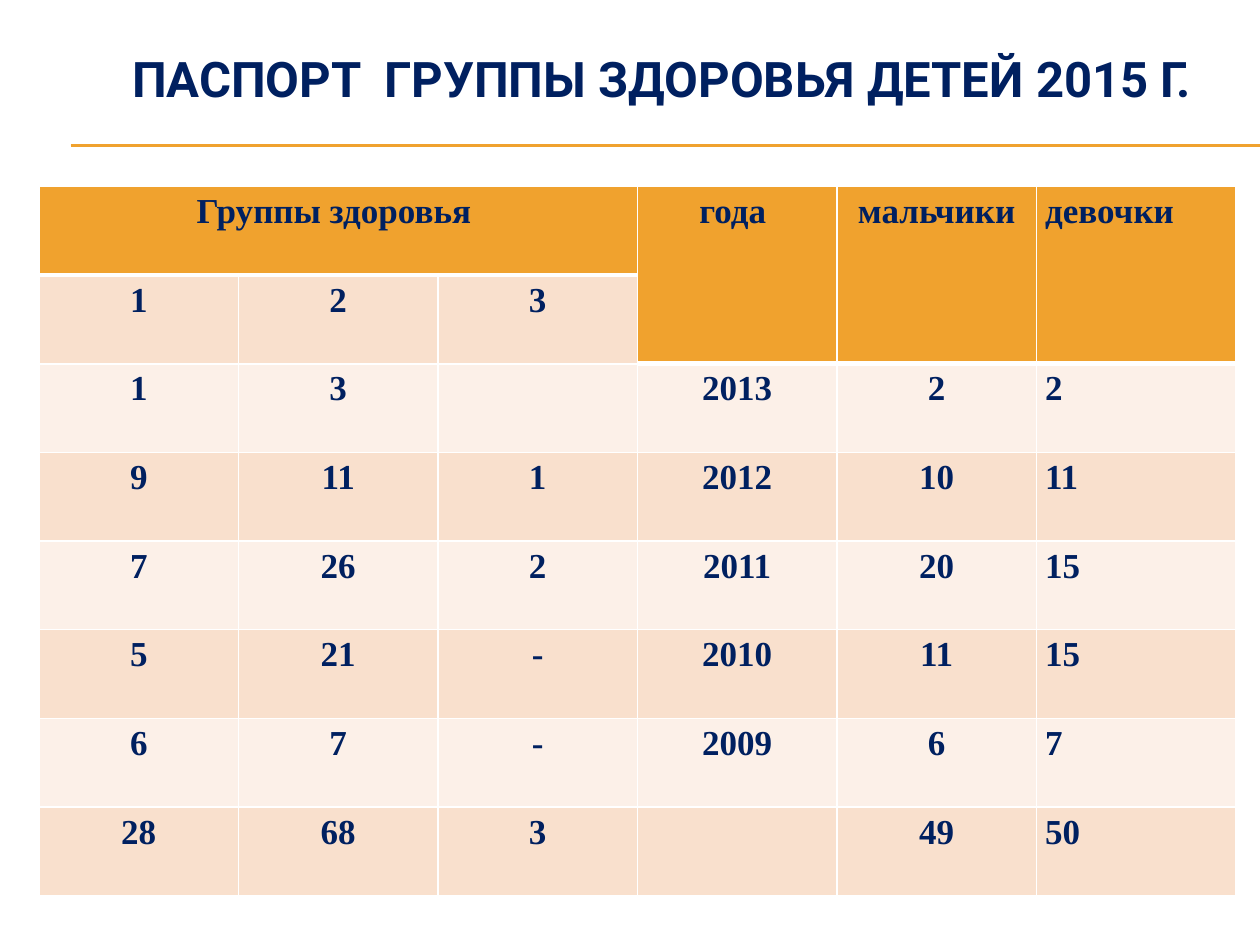
import pptx
import pptx.util
import pptx.dml.color
import pptx.enum.shapes
import pptx.enum.text
import pptx.oxml
import pptx.oxml.ns
import lxml.etree

Inches = pptx.util.Inches
Pt = pptx.util.Pt
RGBColor = pptx.dml.color.RGBColor
ALIGN = pptx.enum.text.PP_ALIGN
qn = pptx.oxml.ns.qn

NAVY = RGBColor(0x00, 0x20, 0x60)
ORANGE = RGBColor(0xF0, 0xA2, 0x2E)
PEACH = RGBColor(0xF9, 0xE0, 0xCD)
CREAM = RGBColor(0xFC, 0xF0, 0xE8)
WHITE = RGBColor(0xFF, 0xFF, 0xFF)

TITLE = "ПАСПОРТ  ГРУППЫ ЗДОРОВЬЯ ДЕТЕЙ 2015 Г."
ROWS = [
    ["Группы здоровья ", "", "", "года ", "мальчики", "девочки"],
    ["1", "2", "3", "", "", ""],
    ["1", "3", "", "2013", "2", "2"],
    ["9", "11", "1", "2012", "10", "11"],
    ["7", "26", "2", "2011", "20", "15"],
    ["5", "21", "-", "2010", "11", "15"],
    ["6", "7", "-", "2009", "6", "7"],
    ["28", "68", "3", "", "49", "50"],
]
GROUP_COLS = 3


def format_runs(p, font, size):
    for r in p.runs:
        r.font.name = font
        r.font.size = Pt(size)
        r.font.bold = True
        r.font.color.rgb = NAVY


def add_rules(s, left, right, tops):
    for top in tops:
        line = s.shapes.add_connector(
            pptx.enum.shapes.MSO_CONNECTOR.STRAIGHT, left, top, right, top)
        line.line.color.rgb = ORANGE
        line.line.width = Pt(0.75)
        lxml.etree.SubElement(line._element.spPr, qn("a:effectLst"))


def add_title(s, left, top, width, height):
    sp = s.shapes.title
    sp.left, sp.top, sp.width, sp.height = left, top, width, height
    tf = sp.text_frame
    tf.text = TITLE
    tf.word_wrap = True
    tf.vertical_anchor = pptx.enum.text.MSO_ANCHOR.MIDDLE
    tf.margin_bottom = Inches(0.35)
    p = tf.paragraphs[0]
    p.alignment = ALIGN.CENTER
    format_runs(p, "Roboto", 28)


def set_borders(cell, bottom):
    tcPr = cell._tc.get_or_add_tcPr()
    widths = {"lnL": 1, "lnR": 1, "lnT": 1, "lnB": bottom}
    for i, (tag, width) in enumerate(widths.items()):
        ln = pptx.oxml.parse_xml(
            f'<a:{tag} {pptx.oxml.ns.nsdecls("a")} w="{Pt(width)}">'
            f'<a:solidFill><a:srgbClr val="{WHITE}"/></a:solidFill></a:{tag}>')
        tcPr.insert(i, ln)


def fill_cell(cell, text, color, align, bottom):
    cell.margin_left = cell.margin_right = Inches(0.07)
    cell.margin_top = cell.margin_bottom = 0
    cell.fill.solid()
    cell.fill.fore_color.rgb = color
    set_borders(cell, bottom)
    if text:
        p = cell.text_frame.paragraphs[0]
        p.text = text
        p.alignment = align
        p.line_spacing = 1.15
        format_runs(p, "Times New Roman", 20)


def add_health_table(s, left, top, width, height):
    n_rows, n_cols = len(ROWS), len(ROWS[0])
    table = s.shapes.add_table(n_rows, n_cols, left, top, width, height).table
    table.first_row = table.horz_banding = False
    for r, values in enumerate(ROWS):
        for c, text in enumerate(values):
            header = r == 0 or (r == 1 and c >= GROUP_COLS)
            color = ORANGE if header else PEACH if r % 2 else CREAM
            align = ALIGN.LEFT if c == n_cols - 1 else ALIGN.CENTER
            fill_cell(table.cell(r, c), text, color, align, 3 if header else 1)
    table.cell(0, 0).merge(table.cell(0, GROUP_COLS - 1))
    for c in range(GROUP_COLS, n_cols):
        table.cell(0, c).merge(table.cell(1, c))


def main():
    prs = pptx.Presentation()
    prs.slide_width, prs.slide_height = Inches(10), Inches(7.5)
    s = prs.slides.add_slide(prs.slide_layouts[5])
    add_rules(s, Inches(0.56), Inches(10), [Inches(1.15), Inches(1.16)])
    add_title(s, Inches(0.5), Inches(0.31), Inches(9.5), Inches(0.92))
    add_health_table(s, Inches(0.31), Inches(1.48), Inches(9.5), Inches(5.63))
    prs.save("out.pptx")


if __name__ == "__main__":
    main()
